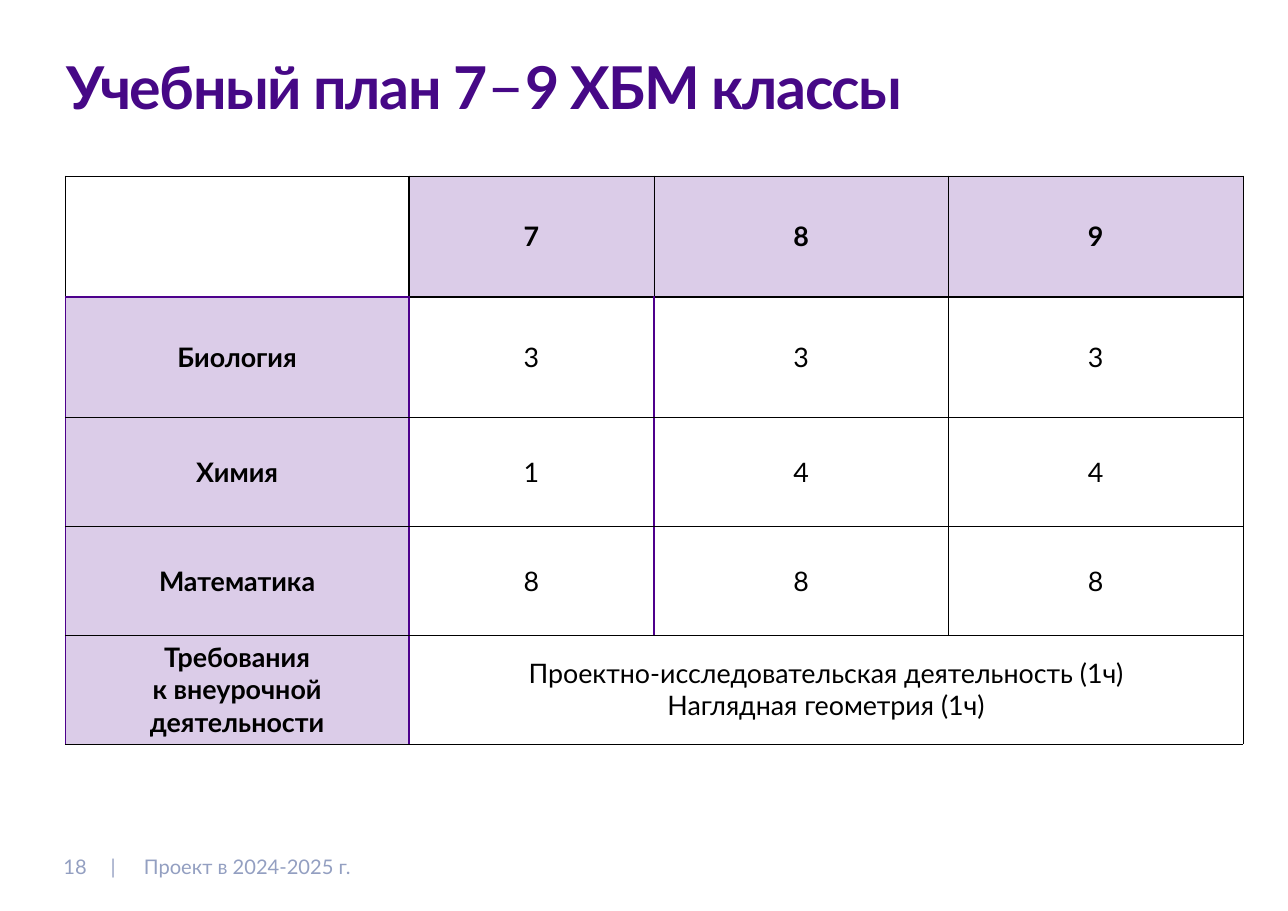
from lxml.etree import SubElement
from pptx import Presentation
from pptx.dml.color import RGBColor
from pptx.enum.text import MSO_ANCHOR, MSO_AUTO_SIZE, PP_ALIGN
from pptx.oxml.ns import qn
from pptx.util import Cm, Pt

FONT = "Lato"
BLACK = RGBColor(0x00, 0x00, 0x00)
PURPLE = RGBColor(0x4D, 0x00, 0x8C)
VIOLET = RGBColor(0x46, 0x08, 0x86)
GREY = RGBColor(0x93, 0x9F, 0xC1)
INSET = Cm(0.15)

THIN, THICK = (BLACK, 1), (BLACK, 3)
FINE, BOLD = (PURPLE, 1), (PURPLE, 3)

COLS = [18.08, 12.88, 15.49, 15.49]
ROWS = [6.35, 6.35, 5.72, 5.72, 5.72]
PLAN = [
    ["", "7", "8", "9"],
    ["Биология", "3", "3", "3"],
    ["Химия", "1", "4", "4"],
    ["Математика", "8", "8", "8"],
    ["Требования\nк внеурочной деятельности",
     "Проектно-исследовательская деятельность (1ч)\nНаглядная геометрия (1ч)", "", ""],
]


def style(run, size, color, bold=False):
    font = run.font
    font.name, font.size, font.bold = FONT, Pt(size), bold
    font.color.rgb = color


def inset(item):
    item.margin_left = item.margin_right = INSET
    item.margin_top = item.margin_bottom = INSET


def add_title(slide, left, top, width, height):
    title = slide.shapes.title
    title.left, title.top, title.width, title.height = left, top, width, height
    frame = title.text_frame
    inset(frame)
    frame.vertical_anchor = MSO_ANCHOR.TOP
    frame.auto_size = MSO_AUTO_SIZE.NONE
    para = frame.paragraphs[0]
    para.alignment = PP_ALIGN.LEFT
    para.line_spacing = 0.8
    for text, size, bold in (("Учебный план 7", 88, True), ("–", 96, False),
                             ("9 ХБМ классы", 88, True)):
        run = para.add_run()
        run.text = text
        style(run, size, VIOLET, bold)
        run.font._element.set("spc", "-210")


def edges(row, col):
    """Return the left, right, top and bottom lines of a cell."""
    last = len(PLAN) - 1
    if row == 0:
        left = THICK if col == 1 else THIN
        right = THICK if col == 0 else THIN
        return left, right, THIN, BOLD if col == 0 else THICK
    sides = [FINE, BOLD] + [BOLD if row < last else THIN] + [THIN] * 2
    top = THIN if row > 1 else BOLD if col == 0 else THICK
    return sides[col], sides[col + 1], top, THIN


def border(cell, lines):
    props = cell._tc.get_or_add_tcPr()
    for tag, (color, width) in zip(("a:lnL", "a:lnR", "a:lnT", "a:lnB"), lines):
        line = SubElement(props, qn(tag), w=str(Pt(width)))
        fill = SubElement(line, qn("a:solidFill"))
        SubElement(fill, qn("a:srgbClr"), val=str(color))


def tint(cell):
    cell.fill.solid()
    cell.fill.fore_color.rgb = PURPLE
    color = cell._tc.tcPr.find(qn("a:solidFill")).find(qn("a:srgbClr"))
    SubElement(color, qn("a:alpha"), val="20000")


def fill_cell(cell, row, col):
    head = (row == 0) != (col == 0)
    border(cell, edges(row, col))
    if head:
        tint(cell)
    else:
        cell.fill.background()
    inset(cell)
    cell.vertical_anchor = MSO_ANCHOR.MIDDLE
    cell.text_frame.text = PLAN[row][col]
    for para in cell.text_frame.paragraphs:
        para.alignment = PP_ALIGN.CENTER
        for run in para.runs:
            style(run, 40, BLACK, head)


def add_plan(slide, left, top):
    frame = slide.shapes.add_table(len(ROWS), len(COLS), left, top,
                                   Cm(sum(COLS)), Cm(sum(ROWS)))
    table = frame.table
    table.first_row = table.horz_banding = False
    for col, width in zip(table.columns, COLS):
        col.width = Cm(width)
    for row, height in zip(table.rows, ROWS):
        row.height = Cm(height)
    for row in range(len(ROWS)):
        for col in range(len(COLS)):
            fill_cell(table.cell(row, col), row, col)
    table.cell(4, 1).merge(table.cell(4, 3))


def add_foot(slide, left, top, height):
    parts = (("18", 0, 2, PP_ALIGN.CENTER),
             ("|", 2.5, 1, PP_ALIGN.CENTER),
             ("Проект в 2024-2025 г.", 4.47, 48.34, PP_ALIGN.LEFT))
    for text, shift, width, align in parts:
        box = slide.shapes.add_textbox(left + Cm(shift), top, Cm(width), height)
        frame = box.text_frame
        inset(frame)
        frame.word_wrap = True
        frame.auto_size = MSO_AUTO_SIZE.NONE
        frame.vertical_anchor = MSO_ANCHOR.MIDDLE
        frame.text = text
        para = frame.paragraphs[0]
        para.alignment = align
        style(para.runs[0], 30, GREY)


def main():
    deck = Presentation()
    deck.slide_width, deck.slide_height = Cm(67.74), Cm(47.9)
    slide = deck.slides.add_slide(deck.slide_layouts[5])
    add_title(slide, Cm(3.35), Cm(3), Cm(61.04), Cm(4.88))
    add_plan(slide, Cm(3.43), Cm(9.25))
    add_foot(slide, Cm(2.95), Cm(44.8), Cm(1.57))
    deck.save("out.pptx")


if __name__ == "__main__":
    main()
